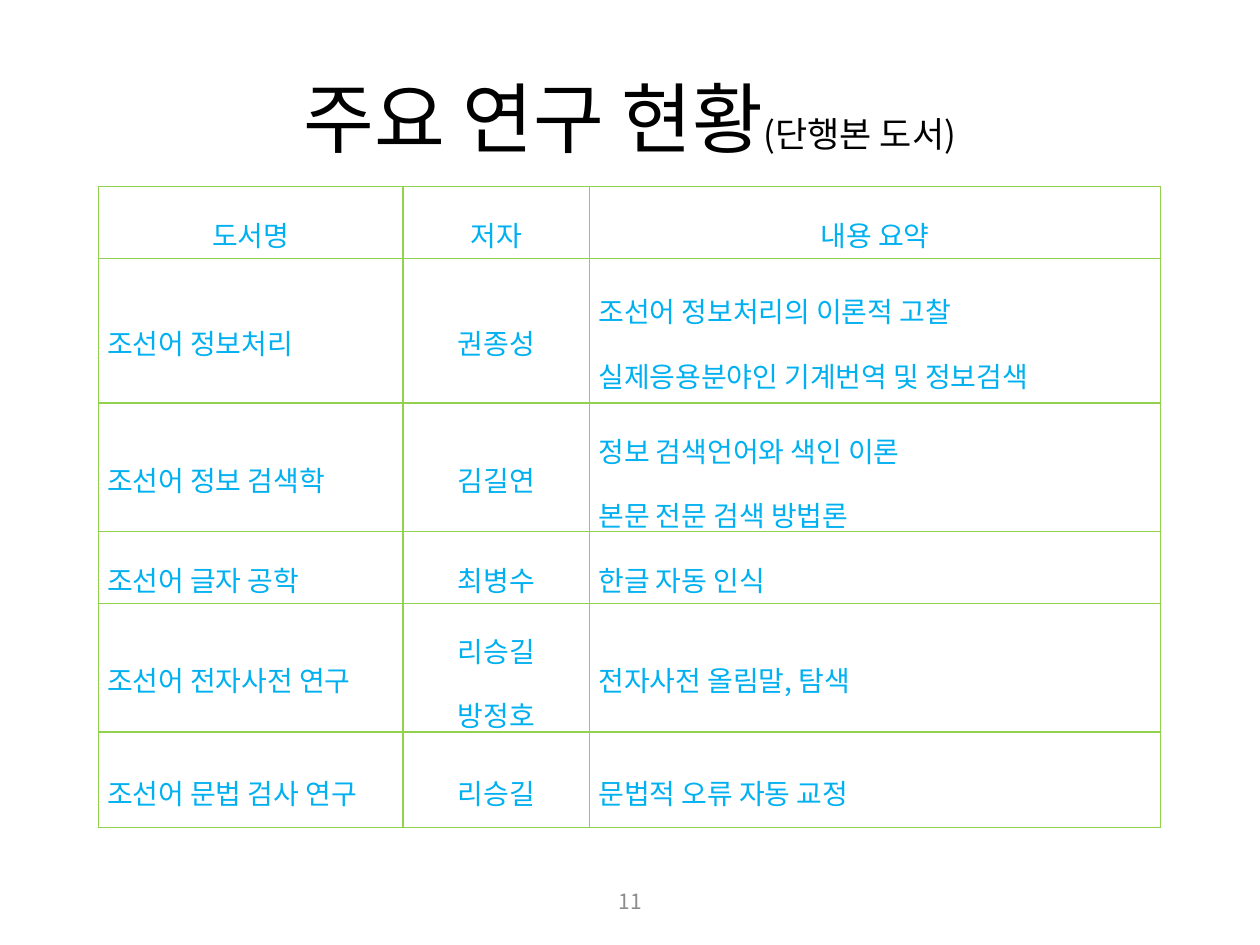
"""Build a slide with a table of the main Korean language processing books."""
from dataclasses import dataclass

from lxml.etree import SubElement
from pptx import Presentation
from pptx.dml.color import RGBColor
from pptx.enum.text import MSO_ANCHOR as Anchor, PP_ALIGN as Align
from pptx.oxml.ns import qn
from pptx.util import Inches, Pt


@dataclass(frozen=True)
class Theme:
    font: str = "Noto Sans CJK KR"
    ink: str = "000000"
    cell: str = "00B0F0"
    border: str = "92D050"
    number: str = "8C8C8C"
    title_size: int = 44
    subtitle_size: int = 20
    cell_size: int = 16
    number_size: int = 12
    border_width: float = 1
    line_spacing: float = 1.6


@dataclass(frozen=True)
class Book:
    name: str
    authors: str
    summary: str
    height: float


THEME = Theme()
HEADER = Book("도서명", "저자", "내용 요약", 0.57)
BOOKS = [
    Book("조선어 정보처리", "권종성",
         "조선어 정보처리의 이론적 고찰\n실제응용분야인 기계번역 및 정보검색", 1.15),
    Book("조선어 정보 검색학", "김길연",
         "정보 검색언어와 색인 이론\n본문 전문 검색 방법론", 1.02),
    Book("조선어 글자 공학", "최병수", "한글 자동 인식", 0.57),
    Book("조선어 전자사전 연구", "리승길\n방정호", "전자사전 올림말, 탐색", 1.02),
    Book("조선어 문법 검사 연구", "리승길", "문법적 오류 자동 교정", 0.76),
]
COLUMNS = (2.42, 1.48, 4.53)


def set_font(font, size: int, color: str) -> None:
    """Set size, colour and both the Latin and East Asian typeface."""
    font.size = Pt(size)
    font.color.rgb = RGBColor.from_string(color)
    font.name = THEME.font
    latin = font._element.find(qn("a:latin"))
    ea = latin.makeelement(qn("a:ea"), {"typeface": THEME.font})
    latin.addnext(ea)


def add_borders(cell) -> None:
    """Draw a solid line on the four sides of a cell."""
    tc_pr = cell._tc.get_or_add_tcPr()
    for i, side in enumerate(("lnL", "lnR", "lnT", "lnB")):
        ln = tc_pr.makeelement(qn(f"a:{side}"), {"w": str(Pt(THEME.border_width))})
        fill = SubElement(ln, qn("a:solidFill"))
        SubElement(fill, qn("a:srgbClr"), val=THEME.border)
        tc_pr.insert(i, ln)


def fill_cell(cell, text: str, align: Align) -> None:
    """Write and format one table cell."""
    cell.fill.background()
    cell.vertical_anchor = Anchor.MIDDLE
    cell.margin_left = cell.margin_right = Inches(0.07)
    cell.margin_top = cell.margin_bottom = Inches(0.02)
    cell.text = text
    for p in cell.text_frame.paragraphs:
        p.alignment = align
        p.line_spacing = THEME.line_spacing
        for r in p.runs:
            set_font(r.font, THEME.cell_size, THEME.cell)
    add_borders(cell)


def add_title(s) -> None:
    """Place the title with its smaller qualifier."""
    sp = s.shapes.title
    sp.left, sp.top, sp.width, sp.height = map(Inches, (0.5, 0.3, 9, 1.25))
    tf = sp.text_frame
    tf.vertical_anchor = Anchor.MIDDLE
    p = tf.paragraphs[0]
    p.alignment = Align.CENTER
    for text, size in (("주요 연구 현황", THEME.title_size),
                       ("(단행본 도서)", THEME.subtitle_size)):
        r = p.add_run()
        r.text = text
        set_font(r.font, size, THEME.ink)


def add_book_table(s) -> None:
    """Add the table with one row per book."""
    rows = [HEADER, *BOOKS]
    height = sum(book.height for book in rows)
    frame = s.shapes.add_table(len(rows), len(COLUMNS), Inches(0.78), Inches(1.48),
                               Inches(sum(COLUMNS)), Inches(height))
    table = frame.table
    table.horz_banding = table.first_row = False
    for column, width in zip(table.columns, COLUMNS):
        column.width = Inches(width)
    for i, book in enumerate(rows):
        table.rows[i].height = Inches(book.height)
        for j, text in enumerate((book.name, book.authors, book.summary)):
            centred = book is HEADER or j == 1
            fill_cell(table.cell(i, j), text, Align.CENTER if centred else Align.JUSTIFY)


def add_page_number(s, number: int) -> None:
    """Add the centred page number at the foot."""
    sp = s.shapes.add_textbox(*map(Inches, (3.42, 6.95, 3.17, 0.4)))
    tf = sp.text_frame
    tf.word_wrap = True
    tf.vertical_anchor = Anchor.MIDDLE
    p = tf.paragraphs[0]
    p.alignment = Align.CENTER
    r = p.add_run()
    r.text = str(number)
    set_font(r.font, THEME.number_size, THEME.number)


def main() -> None:
    """Build and save the slide."""
    prs = Presentation()
    prs.slide_width, prs.slide_height = Inches(10), Inches(7.5)
    s = prs.slides.add_slide(prs.slide_layouts[5])
    add_title(s)
    add_page_number(s, 11)
    add_book_table(s)
    prs.save("out.pptx")


if __name__ == "__main__":
    main()
